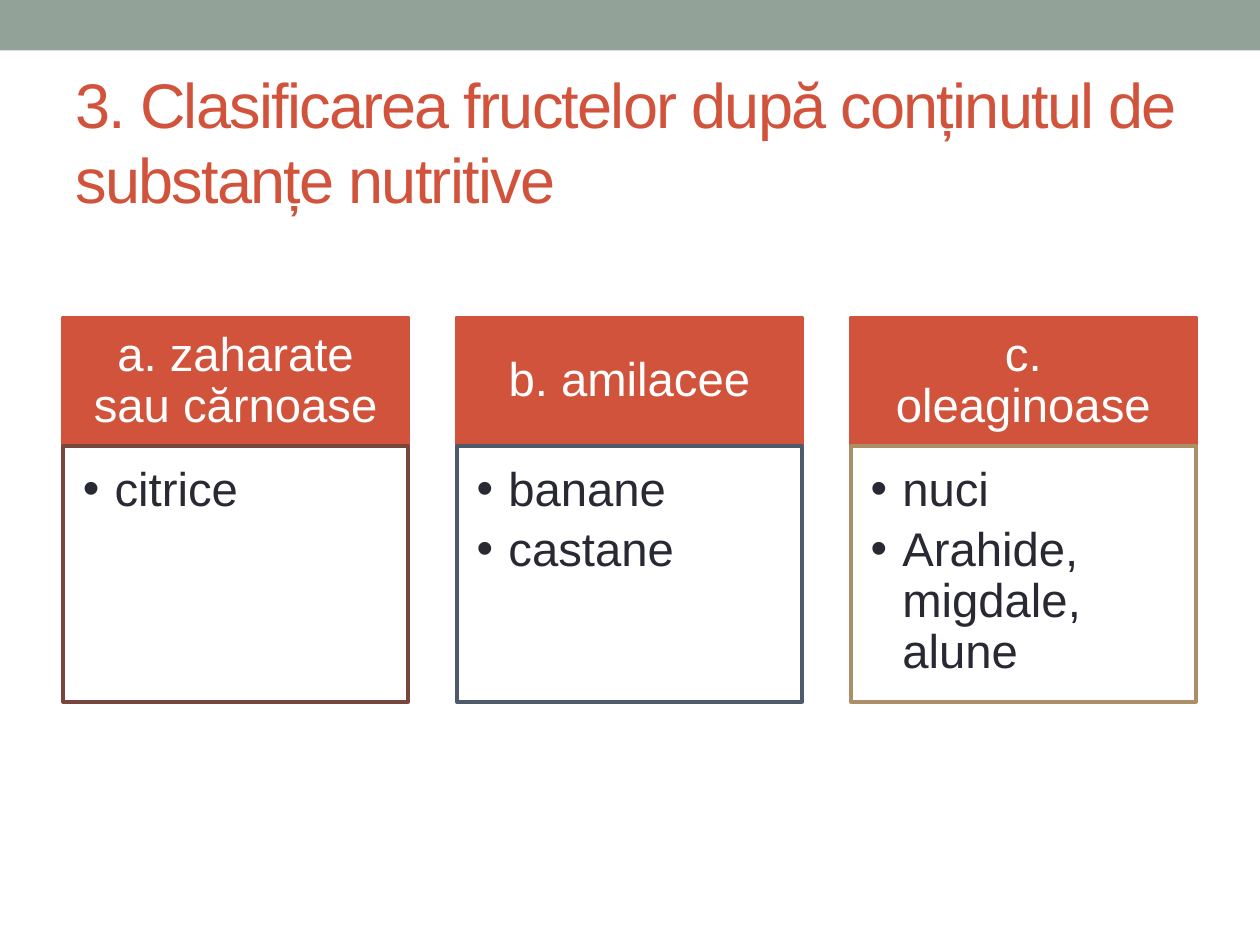
from lxml.etree import SubElement
from pptx import Presentation
from pptx.dml.color import RGBColor
from pptx.enum.shapes import MSO_SHAPE
from pptx.enum.text import MSO_ANCHOR, MSO_AUTO_SIZE, PP_ALIGN
from pptx.oxml.ns import qn
from pptx.util import Cm, Pt

COLORS = {
    "band": "93A299", "accent": "D2533C", "white": "FFFFFF", "text": "292934",
    "brown": "79463D", "slate": "4C5A6A", "sand": "AD8F67",
}
COLUMNS = [
    ("a. zaharate sau cărnoase", ["citrice"], "brown"),
    ("b. amilacee", ["banane", "castane"], "slate"),
    ("c. oleaginoase", ["nuci", "Arahide, migdale, alune"], "sand"),
]


def set_attributes(target, values):
    for name, value in values.items():
        setattr(target, name, value)


class SlideBuilder:
    font_name = "Arial"
    card_size = Pt(27)
    border_width = Pt(2.08)
    bullet_indent = Cm(0.64)

    def __init__(self, slide):
        self.slide = slide

    def run(self, paragraph, text, size, color):
        run = paragraph.add_run()
        run.text = text
        set_attributes(run.font, {"name": self.font_name, "size": size})
        run.font.color.rgb = RGBColor.from_string(COLORS[color])
        return run

    def frame(self, shape, anchor, margins):
        set_attributes(shape.text_frame, {
            "word_wrap": True,
            "auto_size": MSO_AUTO_SIZE.NONE,
            "vertical_anchor": anchor,
        })
        sides = ("margin_left", "margin_top", "margin_right", "margin_bottom")
        set_attributes(shape.text_frame, {
            side: Cm(margin) for side, margin in zip(sides, margins)
        })
        return shape.text_frame

    def box(self, left, top, width, height, fill, line=None):
        shape = self.slide.shapes.add_shape(
            MSO_SHAPE.RECTANGLE, Cm(left), Cm(top), Cm(width), Cm(height))
        shape.shadow.inherit = False
        shape.fill.solid()
        shape.fill.fore_color.rgb = RGBColor.from_string(COLORS[fill])
        if line:
            shape.line.color.rgb = RGBColor.from_string(COLORS[line])
            shape.line.width = self.border_width
        else:
            shape.line.fill.background()
        return shape

    def title(self, text, left, top, width, height):
        title = self.slide.shapes.title
        set_attributes(title, {"left": Cm(left), "top": Cm(top),
                               "width": Cm(width), "height": Cm(height)})
        frame = self.frame(title, MSO_ANCHOR.MIDDLE, (0.25, 0.13, 0.25, 0.13))
        paragraph = frame.paragraphs[0]
        paragraph.alignment = PP_ALIGN.LEFT
        run = self.run(paragraph, text, Pt(36), "accent")
        run.font._element.set("spc", "-100")

    def heading(self, text, left, top, width, height):
        shape = self.box(left, top, width, height, "accent", "accent")
        frame = self.frame(shape, MSO_ANCHOR.MIDDLE, (0.53, 0.3, 0.53, 0.3))
        paragraph = frame.paragraphs[0]
        set_attributes(paragraph, {"alignment": PP_ALIGN.CENTER,
                                   "line_spacing": 0.9})
        self.run(paragraph, text, self.card_size, "white")

    def bullet_list(self, items, left, top, width, height, line):
        shape = self.box(left, top, width, height, "white", line)
        frame = self.frame(shape, MSO_ANCHOR.TOP, (0.4, 0.4, 0.53, 0.6))
        for index, item in enumerate(items):
            paragraph = frame.add_paragraph() if index else frame.paragraphs[0]
            set_attributes(paragraph, {
                "alignment": PP_ALIGN.LEFT, "level": 1,
                "line_spacing": 0.9, "space_after": Pt(5),
            })
            properties = paragraph._p.get_or_add_pPr()
            properties.set("marL", str(self.bullet_indent))
            properties.set("indent", str(-self.bullet_indent))
            SubElement(properties, qn("a:buFont")).set("typeface", self.font_name)
            SubElement(properties, qn("a:buChar")).set("char", "•")
            self.run(paragraph, item, self.card_size, "text")


def main():
    presentation = Presentation()
    set_attributes(presentation, {"slide_width": Cm(25.4),
                                  "slide_height": Cm(19.05)})
    slide = presentation.slides.add_slide(presentation.slide_layouts[5])
    builder = SlideBuilder(slide)

    # Top band and title
    builder.box(0, 0, 25.4, 1.02, "band")
    builder.title("3. Clasificarea fructelor după conținutul de "
                  "substanțe nutritive", 1.27, 1.47, 22.86, 2.74)

    # Three columns: a heading above its list
    first_left, pitch, width = 1.27, 7.94, 6.96
    top, heading_height, list_height = 6.4, 2.59, 5.16
    for index, (heading, items, line) in enumerate(COLUMNS):
        left = first_left + index * pitch
        builder.heading(heading, left, top, width, heading_height)
        builder.bullet_list(items, left, top + heading_height,
                            width, list_height, line)

    presentation.save("out.pptx")


if __name__ == "__main__":
    main()
